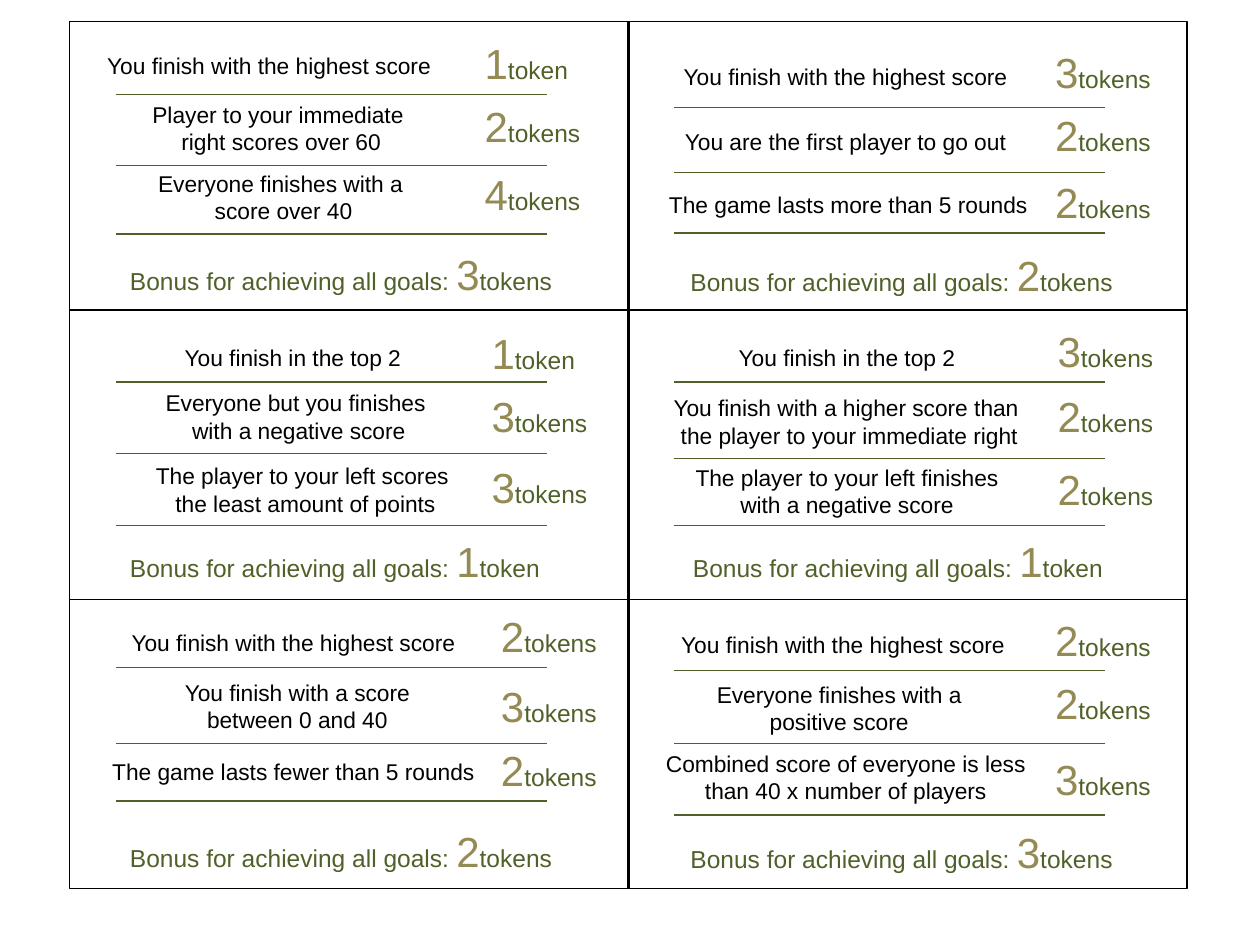
from dataclasses import dataclass

from pptx import Presentation
from pptx import util as u
from pptx.dml.color import RGBColor
from pptx.enum import shapes, text
from pptx.oxml.ns import qn
from lxml import etree


@dataclass(frozen=True)
class Theme:
    font: str = "Arial"
    ink: str = "000000"
    green: str = "4F6128"
    tan: str = "948A54"
    goal_size: int = 13
    label_size: int = 14
    number_size: int = 24
    line_width: float = 0.75


theme = Theme()
CARD_W, CARD_H = 11.28, 5.82
PITCH_X, PITCH_Y = 11.25, 5.83
GRID_LEFT, GRID_TOP = 1.4, 0.43
RULE_INSET, RULE_W = 0.94, 8.69
TOKEN_W, BONUS_W, TOKEN_H = 3.55, 9.17, 1.27
ONE_LINE_H, TWO_LINE_H, ONE_LINE_CHARS = 0.81, 1.37, 36

# Positions are centimetres from the card's top left corner.
# Card: token column x, goals, bonus (x, y, tokens)
# Goal: wording, (x, y, width), tokens, token y, y of the rule below
cards = [
    (8.12, [
        ("You finish with the highest score", (-0.03, 0.48, 8.1), 1, 0.2, 1.47),
        ("Player to your immediate \nright scores over 60", (0.58, 1.47, 7.37), 2, 1.47, 2.9),
        ("Everyone finishes with a \nscore over 40", (0.3, 2.87, 8.03), 4, 2.84, 4.29),
    ], (0.97, 4.45, 3)),
    (8.37, [
        ("You finish with the highest score", (-0.03, 0.71, 8.84), 3, 0.38, 1.73),
        ("You are the first player to go out", (0.15, 2.03, 8.48), 2, 1.65, 3.05),
        ("The game lasts more than 5 rounds", (0.43, 3.3, 8.03), 2, 3, 4.27),
    ], (1.02, 4.47, 2)),
    (8.26, [
        ("You finish in the top 2", (0.08, 0.55, 8.84), 1, 0.22, 1.44),
        ("Everyone but you finishes \nwith a negative score", (0.48, 1.46, 8.28), 3, 1.49, 2.88),
        ("The player to your left scores\n the least amount of points", (0.03, 2.93, 9.32), 3, 2.91, 4.33),
    ], (0.97, 4.41, 1)),
    (8.42, [
        ("You finish in the top 2", (0, 0.55, 8.84), 3, 0.17, 1.44),
        ("You finish with a higher score than \nthe player to your immediate right",
         (-0.03, 1.56, 8.99), 2, 1.49, 2.98),
        ("The player to your left finishes \nwith a negative score ", (0.28, 2.96, 8.41), 2, 2.96, 4.33),
    ], (1.07, 4.41, 1)),
    (8.45, [
        ("You finish with the highest score", (-0.15, 0.46, 9.32), 2, 0.1, 1.37),
        ("You finish with a score \nbetween 0 and 40 ", (0.64, 1.47, 8.03), 3, 1.5, 2.9),
        ("The game lasts fewer than 5 rounds", (-0.15, 3.07, 9.32), 2, 2.79, 4.06),
    ], (0.97, 4.42, 2)),
    (8.37, [
        ("You finish with the highest score", (-0.08, 0.51, 8.84), 2, 0.18, 1.42),
        ("Everyone finishes with a positive score", (0.86, 1.5, 6.81), 2, 1.45, 2.9),
        ("Combined score of everyone is less than 40 x number of players",
         (0.38, 2.9, 8.03), 3, 2.97, 4.34),
    ], (1.02, 4.45, 3)),
]


def add_text(s, x, y, w, h, paragraphs, align):
    """Add a text box; each paragraph is a list of (wording, size, colour) runs."""
    tf = s.shapes.add_textbox(u.Cm(x), u.Cm(y), u.Cm(w), u.Cm(h)).text_frame
    tf.word_wrap = True
    for i, runs in enumerate(paragraphs):
        p = tf.paragraphs[0] if i == 0 else tf.add_paragraph()
        p.alignment = align
        for wording, size, colour in runs:
            r = p.add_run()
            r.text = wording
            for name, value in {"name": theme.font, "size": u.Pt(size)}.items():
                setattr(r.font, name, value)
            r.font.color.rgb = RGBColor.from_string(colour)


def token_runs(count):
    """Return a large number followed by its unit."""
    unit = "token" if count == 1 else "tokens"
    return [(str(count), theme.number_size, theme.tan), (unit, theme.label_size, theme.green)]


prs = Presentation()
prs.slide_width, prs.slide_height = u.Cm(25.4), u.Cm(19.05)
s = prs.slides.add_slide(prs.slide_layouts[6])

for i, (token_x, goals, (bonus_x, bonus_y, bonus)) in enumerate(cards):
    row, col = divmod(i, 2)
    left, top = GRID_LEFT + col * PITCH_X, GRID_TOP + row * PITCH_Y

    sp = s.shapes.add_shape(shapes.MSO_SHAPE.RECTANGLE, u.Cm(left), u.Cm(top), u.Cm(CARD_W), u.Cm(CARD_H))
    sp.shadow.inherit = False
    sp.fill.background()
    sp.line.color.rgb = RGBColor.from_string(theme.ink)
    sp.line.width = u.Pt(theme.line_width)

    for wording, (x, y, w), tokens, token_y, rule_y in goals:
        rule_left, rule_top = left + RULE_INSET, u.Cm(top + rule_y)
        rule = s.shapes.add_connector(shapes.MSO_CONNECTOR.STRAIGHT, u.Cm(rule_left), rule_top,
                                      u.Cm(rule_left + RULE_W), rule_top)
        rule.line.color.rgb = RGBColor.from_string(theme.green)
        rule.line.width = u.Pt(theme.line_width)
        etree.SubElement(rule.element.spPr, qn("a:effectLst"))

        h = TWO_LINE_H if len(wording) > ONE_LINE_CHARS else ONE_LINE_H
        lines = [[(line, theme.goal_size, theme.ink)] for line in wording.split("\n")]
        add_text(s, left + x, top + y, w, h, lines, text.PP_ALIGN.CENTER)
        add_text(s, left + token_x, top + token_y, TOKEN_W, TOKEN_H,
                 [token_runs(tokens)], text.PP_ALIGN.LEFT)

    label = ("Bonus for achieving all goals: ", theme.label_size, theme.green)
    add_text(s, left + bonus_x, top + bonus_y, BONUS_W, TOKEN_H,
             [[label, *token_runs(bonus)]], text.PP_ALIGN.LEFT)

prs.save("out.pptx")
